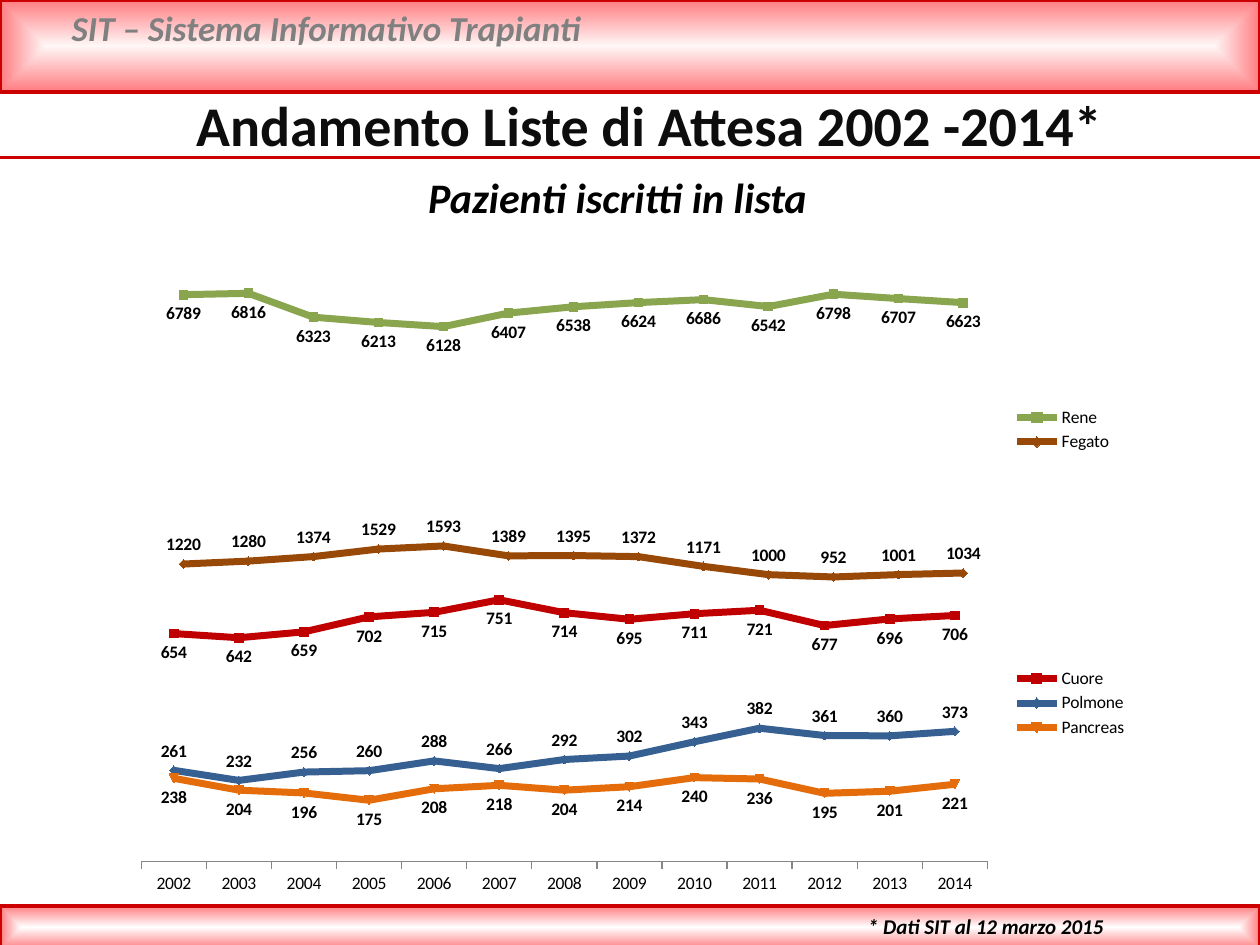
from dataclasses import dataclass
from typing import Any

from lxml import etree
from pptx import Presentation
from pptx.chart.data import CategoryChartData
from pptx.dml.color import RGBColor
from pptx.enum import chart as ch, shapes, text
from pptx.oxml.ns import qn
from pptx.util import Inches, Pt

COLORS = {
    "rule": "CC0000", "band": "FF7C80", "glow": "FFF6F6", "white": "FFFFFF",
    "grey": "808080", "title": "0D0D0D", "black": "000000", "axis": "868686",
    "kidney": "89A54E", "liver": "984807", "heart": "C00000",
    "lung": "376092", "pancreas": "E46C0A",
}
FONT = "Calibri"
BELOW, ABOVE = ch.XL_LABEL_POSITION.BELOW, ch.XL_LABEL_POSITION.ABOVE
Box = tuple[float, float, float, float]


@dataclass
class Band:
    box: Box
    center: str


@dataclass
class Caption:
    words: str
    box: Box
    size: int
    color: str
    italic: bool = True
    align: Any = text.PP_ALIGN.LEFT


@dataclass
class Organ:
    name: str
    color: str
    label_side: Any
    patients: list[int]


@dataclass
class Trend:
    box: Box
    plot: Box  # inner plot area as fractions of the chart
    top: int
    step: int
    show_axis: bool
    categories: list[str]
    organs: list[Organ]


BANDS = [
    Band((0, 0, 10, 0.73), "glow"),
    Band((0, 7.19, 10, 0.34), "white"),
]
HEADING = Caption("Andamento Liste di Attesa 2002 -2014*", (1.14, 0.67, 8.03, 0.64),
                  32, "title", False, text.PP_ALIGN.CENTER)
CAPTIONS = [
    Caption("SIT – Sistema Informativo Trapianti", (0.47, 0, 8.98, 0.44), 20, "grey"),
    Caption("* Dati SIT al 12 marzo 2015", (6.79, 7.2, 3.21, 0.3), 12, "black"),
    Caption("Pazienti iscritti in lista", (2.79, 1.31, 4.22, 0.51), 24, "black",
            align=text.PP_ALIGN.CENTER),
]
TRENDS = [
    Trend((0.96, 4.01, 8.09, 3.14), (0.02, 0.02, 0.83, 0.88), 1000, 200, True,
          [str(year) for year in range(2002, 2015)], [
        Organ("Cuore", "heart", BELOW,
              [654, 642, 659, 702, 715, 751, 714, 695, 711, 721, 677, 696, 706]),
        Organ("Polmone", "lung", ABOVE,
              [261, 232, 256, 260, 288, 266, 292, 302, 343, 382, 361, 360, 373]),
        Organ("Pancreas", "pancreas", BELOW,
              [238, 204, 196, 175, 208, 218, 204, 214, 240, 236, 195, 201, 221]),
    ]),
    Trend((1.04, 1.81, 7.89, 3.2), (0.02, 0.02, 0.85, 0.96), 8000, 1000, False,
          [str(number) for number in range(1, 14)], [
        Organ("Rene", "kidney", BELOW,
              [6789, 6816, 6323, 6213, 6128, 6407, 6538, 6624, 6686, 6542, 6798,
               6707, 6623]),
        Organ("Fegato", "liver", ABOVE,
              [1220, 1280, 1374, 1529, 1593, 1389, 1395, 1372, 1171, 1000, 952,
               1001, 1034]),
    ]),
]


def rgb(name: str) -> RGBColor:
    return RGBColor.from_string(COLORS[name])


def style_font(font: Any, size: int, color: str, **flags: bool) -> None:
    for key, value in {"name": FONT, "size": Pt(size), **flags}.items():
        setattr(font, key, value)
    font.color.rgb = rgb(color)


def style_line(line: Any, color: str, width: float) -> None:
    line.color.rgb = rgb(color)
    line.width = Pt(width)


def inches(box: Box) -> list[int]:
    return [Inches(length) for length in box]


def draw_band(slide: Any, band: Band) -> None:
    bar = slide.shapes.add_shape(shapes.MSO_SHAPE.RECTANGLE, *inches(band.box))
    bar.shadow.inherit = False
    style_line(bar.line, "rule", 2)
    bar.fill.gradient()
    for stop, color in zip(bar.fill.gradient_stops, (band.center, "band")):
        stop.color.rgb = rgb(color)
    # Turn the linear gradient into one that spreads from the centre
    gradient = bar._element.spPr.find(qn("a:gradFill"))
    gradient.remove(gradient.find(qn("a:lin")))
    spread = etree.SubElement(gradient, qn("a:path"), path="shape")
    etree.SubElement(spread, qn("a:fillToRect"),
                     dict.fromkeys("ltrb", "50000"))


def draw_rule(slide: Any, y: float) -> None:
    rule = slide.shapes.add_connector(shapes.MSO_CONNECTOR.STRAIGHT,
                                      *inches((0, y, 10, y)))
    style_line(rule.line, "rule", 2)
    etree.SubElement(rule._element.spPr, qn("a:effectLst"))


def write_caption(holder: Any, caption: Caption) -> None:
    for key, value in zip(("left", "top", "width", "height"), inches(caption.box)):
        setattr(holder, key, value)
    frame = holder.text_frame
    frame.word_wrap = True
    frame.auto_size = text.MSO_AUTO_SIZE.NONE
    frame.vertical_anchor = text.MSO_ANCHOR.TOP
    frame.text = caption.words
    paragraph = frame.paragraphs[0]
    paragraph.alignment = caption.align
    style_font(paragraph.font, caption.size, caption.color,
               bold=True, italic=caption.italic)


def place_plot(chart: Any, plot: Box) -> None:
    area = chart._chartSpace.chart.plotArea
    for old in area.findall(qn("c:layout")):
        area.remove(old)
    layout = etree.Element(qn("c:layout"))
    area.insert(0, layout)
    manual = etree.SubElement(layout, qn("c:manualLayout"))
    settings = {"layoutTarget": "inner", "xMode": "edge", "yMode": "edge",
                **dict(zip("xywh", map(str, plot)))}
    for tag, value in settings.items():
        etree.SubElement(manual, qn(f"c:{tag}"), val=value)


def draw_trend(slide: Any, trend: Trend) -> None:
    data = CategoryChartData()
    data.categories = trend.categories
    for organ in trend.organs:
        data.add_series(organ.name, organ.patients)
    chart = slide.shapes.add_chart(ch.XL_CHART_TYPE.LINE_MARKERS,
                                   *inches(trend.box), data).chart
    style_font(chart.font, 10, "black")
    chart.has_title = False
    chart.has_legend = True
    chart.legend.position = ch.XL_LEGEND_POSITION.RIGHT
    chart.legend.include_in_layout = False
    place_plot(chart, trend.plot)

    # Axes
    years, amounts = chart.category_axis, chart.value_axis
    years.visible = trend.show_axis
    style_line(years.format.line, "axis", 0.75)
    amounts_format = {"visible": False, "has_major_gridlines": False,
                      "minimum_scale": 0, "maximum_scale": trend.top,
                      "major_unit": trend.step}
    for key, value in amounts_format.items():
        setattr(amounts, key, value)

    # Lines, markers and labels
    chart.plots[0].vary_by_categories = False
    for series, organ in zip(chart.plots[0].series, trend.organs):
        series.smooth = False
        style_line(series.format.line, organ.color, 4)
        marker = series.marker
        marker.size = 5
        marker.format.fill.solid()
        marker.format.fill.fore_color.rgb = rgb(organ.color)
        style_line(marker.format.line, organ.color, 0.75)
        labels = series.data_labels
        labels.show_value = True
        labels.position = organ.label_side
        style_font(labels.font, 10, "black", bold=True)


def main() -> None:
    deck = Presentation()
    deck.slide_width, deck.slide_height = Inches(10), Inches(7.5)
    slide = deck.slides.add_slide(deck.slide_layouts[5])

    # Frame of the page
    for band in BANDS:
        draw_band(slide, band)
    draw_rule(slide, 1.25)

    # Charts and words
    for trend in TRENDS:
        draw_trend(slide, trend)
    write_caption(slide.shapes.title, HEADING)
    for caption in CAPTIONS:
        write_caption(slide.shapes.add_textbox(*inches(caption.box)), caption)
    deck.save("out.pptx")


if __name__ == "__main__":
    main()
